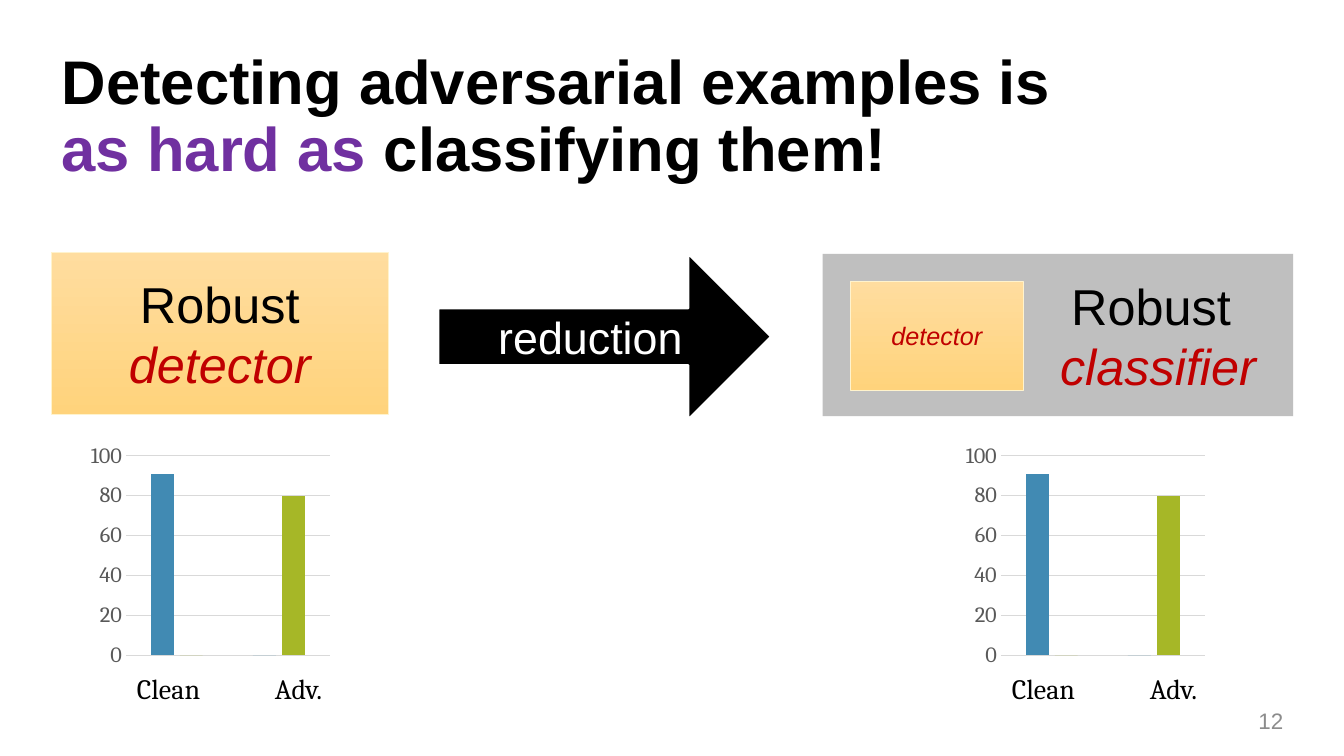
from pptx import Presentation
from pptx.chart.data import CategoryChartData
from pptx.dml.color import RGBColor
from pptx.enum.chart import XL_CHART_TYPE, XL_TICK_MARK
from pptx.enum.shapes import MSO_SHAPE
from pptx.enum.text import MSO_ANCHOR, PP_ALIGN
from pptx.oxml import parse_xml
from pptx.util import Cm, Pt

BLACK = RGBColor(0x00, 0x00, 0x00)
WHITE = RGBColor(0xFF, 0xFF, 0xFF)
PURPLE = RGBColor(0x70, 0x30, 0xA0)
RED = RGBColor(0xC0, 0x00, 0x00)
GRAY = RGBColor(0xBF, 0xBF, 0xBF)
NUMBER_GRAY = RGBColor(0x8C, 0x8C, 0x8C)
AXIS_GRAY = RGBColor(0x59, 0x59, 0x59)
GRID_GRAY = RGBColor(0xD9, 0xD9, 0xD9)
CREAM = RGBColor(0xFF, 0xF3, 0xCD)
ORANGE_GRADIENT = (RGBColor(0xFF, 0xDD, 0x9F), RGBColor(0xFF, 0xD3, 0x7C))
SERIES = (
    ("Series 1", (91, 0), RGBColor(0x41, 0x8A, 0xB3)),
    ("Series 2", (0, 80), RGBColor(0xA6, 0xB7, 0x27)),
)
PLOT_LAYOUT = (
    '<c:layout xmlns:c="http://schemas.openxmlformats.org/drawingml/2006/chart">'
    '<c:manualLayout><c:layoutTarget val="inner"/>'
    '<c:xMode val="edge"/><c:yMode val="edge"/>'
    '<c:x val="0.323"/><c:y val="0.041"/><c:w val="0.677"/><c:h val="0.912"/>'
    '</c:manualLayout></c:layout>'
)


def write(shape, runs, size, align=PP_ALIGN.CENTER, anchor=MSO_ANCHOR.MIDDLE,
          font_name="Arial", bold=False):
    """Write (text, color, italic) runs into a shape, with None as a line break."""
    frame = shape.text_frame
    frame.word_wrap = True
    frame.vertical_anchor = anchor
    paragraph = frame.paragraphs[0]
    paragraph.alignment = align
    for item in runs:
        if item is None:
            paragraph.add_line_break()
            continue
        text, color, italic = item
        run = paragraph.add_run()
        run.text = text
        run.font.name = font_name
        run.font.size = Pt(size)
        run.font.bold = bold
        run.font.italic = italic
        run.font.color.rgb = color
    return paragraph


def add_title(slide, left, top, width, height):
    """Place the two-line title in its placeholder."""
    title = slide.shapes.title
    title.left, title.top, title.width, title.height = left, top, width, height
    runs = [("Detecting adversarial examples is ", BLACK, False), None,
            ("as hard as ", PURPLE, False), ("classifying them!", BLACK, False)]
    write(title, runs, 44, PP_ALIGN.LEFT, bold=True).line_spacing = 0.9


def add_detector(slide, left, top, width, height, runs, size):
    """Draw an orange detector box."""
    box = slide.shapes.add_shape(MSO_SHAPE.RECTANGLE, left, top, width, height)
    box.shadow.inherit = False
    box.fill.gradient()
    box.fill.gradient_angle = 270
    for stop, color in zip(box.fill.gradient_stops, ORANGE_GRADIENT):
        stop.color.rgb = color
    box.line.color.rgb = CREAM
    box.line.width = Pt(0.5)
    write(box, runs, size)


def add_classifier(slide, left, top, width, height):
    """Draw the gray classifier box with a small detector inside."""
    box = slide.shapes.add_shape(MSO_SHAPE.RECTANGLE, left, top, width, height)
    box.shadow.inherit = False
    box.fill.solid()
    box.fill.fore_color.rgb = GRAY
    box.line.fill.background()
    box.text_frame.margin_left = Cm(5.3)
    write(box, [("Robust ", BLACK, False), None, ("classifier", RED, True)], 36)
    add_detector(slide, left + Cm(0.71), top + Cm(0.69), Cm(4.34), Cm(2.74),
                 [("detector", RED, True)], 18)


def add_reduction_arrow(slide, left, top, width, height):
    """Draw the black block arrow between the two boxes."""
    arrow = slide.shapes.add_shape(MSO_SHAPE.RIGHT_ARROW, left, top, width, height)
    arrow.adjustments[0] = 0.343
    arrow.adjustments[1] = 0.5
    arrow.shadow.inherit = False
    arrow.fill.solid()
    arrow.fill.fore_color.rgb = BLACK
    arrow.line.color.rgb = WHITE
    arrow.line.width = Pt(1.5)
    write(arrow, [("reduction", WHITE, False)], 32)


def add_accuracy_chart(slide, left, top, width, height):
    """Draw the clean and adversarial accuracy columns with labels below."""
    data = CategoryChartData()
    data.categories = ["1", "2"]
    for name, values, _ in SERIES:
        data.add_series(name, values)
    chart = slide.shapes.add_chart(XL_CHART_TYPE.COLUMN_CLUSTERED,
                                   left, top, width, height, data).chart
    chart.has_title = False
    chart.has_legend = False
    chart.font.name = "Arial"
    chart.font.size = Pt(10)
    chart.font.color.rgb = BLACK

    plot = chart.plots[0]
    plot.vary_by_categories = False
    plot.gap_width = 219
    plot.overlap = -27
    for series, (_, _, color) in zip(plot.series, SERIES):
        series.format.fill.solid()
        series.format.fill.fore_color.rgb = color

    chart.category_axis.visible = False
    axis = chart.value_axis
    axis.minimum_scale, axis.maximum_scale, axis.major_unit = 0, 100, 20
    axis.major_tick_mark = XL_TICK_MARK.NONE
    axis.minor_tick_mark = XL_TICK_MARK.NONE
    axis.format.line.fill.background()
    axis.major_gridlines.format.line.color.rgb = GRID_GRAY
    axis.major_gridlines.format.line.width = Pt(0.75)
    axis.tick_labels.font.name = "Cambria"
    axis.tick_labels.font.size = Pt(16)
    axis.tick_labels.font.color.rgb = AXIS_GRAY

    plot_area = chart.element.xpath("c:chart/c:plotArea")[0]
    for layout in plot_area.xpath("c:layout"):
        plot_area.remove(layout)
    plot_area.insert(0, parse_xml(PLOT_LAYOUT))

    for text, offset in (("Clean", 2.49), ("Adv.", 5.97)):
        label = slide.shapes.add_textbox(left + Cm(offset), top + Cm(5.61),
                                         Cm(3.15), Cm(1.12))
        write(label, [(text, BLACK, False)], 20, PP_ALIGN.LEFT,
              MSO_ANCHOR.TOP, "Cambria")


def add_slide_number(slide, left, top, width, height):
    """Place the slide number at the bottom right."""
    number = slide.shapes.add_textbox(left, top, width, height)
    write(number, [("12", NUMBER_GRAY, False)], 16, PP_ALIGN.RIGHT)


def main():
    """Build and save the slide."""
    presentation = Presentation()
    presentation.slide_width = Cm(33.87)
    presentation.slide_height = Cm(19.05)
    slide = presentation.slides.add_slide(presentation.slide_layouts[5])
    add_title(slide, Cm(1.3), Cm(1.14), Cm(30.4), Cm(3.68))
    add_slide_number(slide, Cm(24.97), Cm(17.65), Cm(7.62), Cm(1.02))
    add_reduction_arrow(slide, Cm(11.05), Cm(6.4), Cm(8.38), Cm(4.17))
    add_detector(slide, Cm(1.3), Cm(6.35), Cm(8.48), Cm(4.09),
                 [("Robust ", BLACK, False), ("detector", RED, True)], 36)
    add_classifier(slide, Cm(20.73), Cm(6.4), Cm(11.86), Cm(4.09))
    for left in (Cm(0.71), Cm(22.76)):
        add_accuracy_chart(slide, left, Cm(11.18), Cm(7.62), Cm(5.64))
    presentation.save("out.pptx")


if __name__ == "__main__":
    main()
